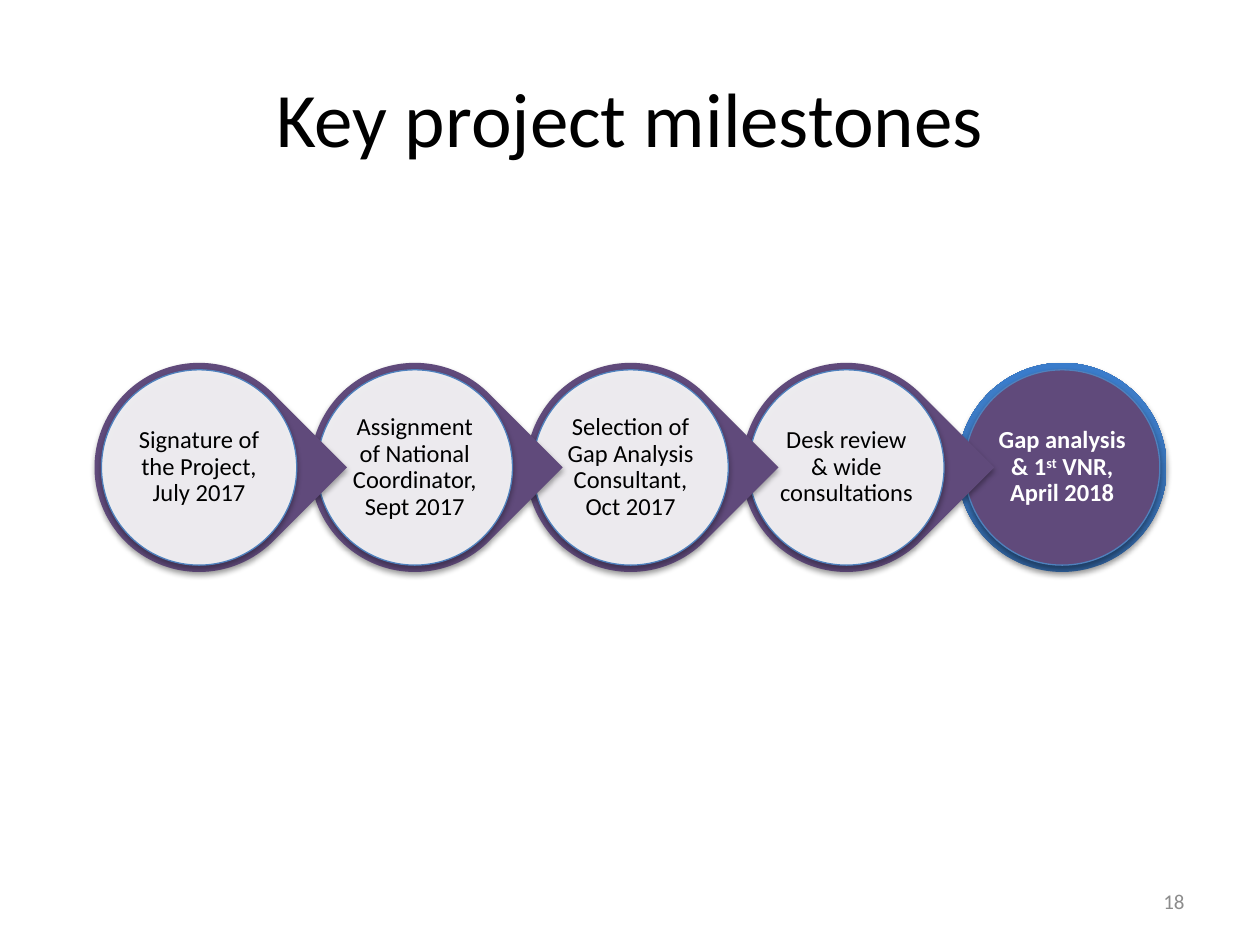
import pptx
import pptx.dml.color
import pptx.enum.shapes
import pptx.enum.text
import pptx.oxml
import pptx.oxml.ns
import pptx.util
from lxml import etree

RGBColor = pptx.dml.color.RGBColor
Inches = pptx.util.Inches
Pt = pptx.util.Pt
SHAPE = pptx.enum.shapes.MSO_SHAPE
ALIGN = pptx.enum.text.PP_ALIGN
MIDDLE = pptx.enum.text.MSO_ANCHOR.MIDDLE

BLACK = RGBColor(0x00, 0x00, 0x00)
WHITE = RGBColor(0xFF, 0xFF, 0xFF)
GREY = RGBColor(0x8C, 0x8C, 0x8C)
PURPLE = RGBColor(0x60, 0x4A, 0x7B)
BLUE = RGBColor(0x4F, 0x81, 0xBD)
RING_STOPS = [
    (0, RGBColor(0x2F, 0x5F, 0x99)),
    (80, RGBColor(0x3D, 0x7C, 0xC7)),
    (100, RGBColor(0x3A, 0x7C, 0xCB)),
]

SLIDE_W, SLIDE_H = 10, 7.5
RING = 1.66         # outer diameter of a milestone
DISC = 1.55         # inner disc
LABEL = 1.11        # square inside the disc

# Each milestone is a list of (text, is superscript) pieces
MILESTONES = [
    [("Signature of the Project, July 2017", False)],
    [("Assignment of National Coordinator, Sept 2017", False)],
    [("Selection of Gap Analysis Consultant, Oct 2017", False)],
    [("Desk review & wide consultations", False)],
    [("Gap analysis & 1", False), ("st", True), (" VNR, April 2018", False)],
]


def set_values(target, values):
    for name, value in values.items():
        setattr(target, name, value)


def format_font(font, size, color, bold=False):
    set_values(font, {"name": "Calibri", "size": Pt(size), "bold": bold})
    font.color.rgb = color


def centred_box(center_x, center_y, size):
    return [Inches(v) for v in (center_x - size / 2, center_y - size / 2, size, size)]


def add_drop_shadow(shape):
    shape.shadow.inherit = False
    effects = shape._element.spPr.find(pptx.oxml.ns.qn("a:effectLst"))
    effects.append(pptx.oxml.parse_xml(
        f'<a:outerShdw {pptx.oxml.ns.nsdecls("a")} blurRad="{Pt(3.1)}" dist="{Pt(1.8)}" '
        'dir="5400000" rotWithShape="0"><a:srgbClr val="000000">'
        '<a:alpha val="35000"/></a:srgbClr></a:outerShdw>'))


def fill_gradient(shape, stops):
    """Shade from bottom to top through any number of stops."""
    shape.fill.gradient()
    gradient = shape._element.spPr.find(pptx.oxml.ns.qn("a:gradFill"))
    stop_list = gradient.find(pptx.oxml.ns.qn("a:gsLst"))
    for stop in list(stop_list):
        stop_list.remove(stop)
    for percent, color in stops:
        stop_list.append(pptx.oxml.parse_xml(
            f'<a:gs {pptx.oxml.ns.nsdecls("a")} pos="{percent * 1000}">'
            f'<a:srgbClr val="{color}"/></a:gs>'))
    gradient.find(pptx.oxml.ns.qn("a:lin")).set("ang", "16200000")


def add_title(slide, left, top, width, height):
    title = slide.shapes.title
    set_values(title, {"left": Inches(left), "top": Inches(top),
                       "width": Inches(width), "height": Inches(height)})
    title.text_frame.text = "Key project milestones"
    title.text_frame.vertical_anchor = MIDDLE
    heading = title.text_frame.paragraphs[0]
    heading.alignment = ALIGN.CENTER
    format_font(heading.runs[0].font, 44, BLACK)


def add_page_number(slide, left, top, width, height):
    number = slide.shapes.add_textbox(*map(Inches, (left, top, width, height)))
    set_values(number.text_frame, {"word_wrap": True, "vertical_anchor": MIDDLE,
                                   "text": "18"})
    paragraph = number.text_frame.paragraphs[0]
    paragraph.alignment = ALIGN.RIGHT
    format_font(paragraph.runs[0].font, 12, GREY)


def add_milestone(shapes, pieces, center_x, center_y, is_last):
    # Outer ring, pointing at the next milestone unless it is the last
    outline = SHAPE.OVAL if is_last else SHAPE.TEAR
    ring = shapes.add_shape(outline, *centred_box(center_x, center_y, RING))
    if is_last:
        fill_gradient(ring, RING_STOPS)
    else:
        ring.rotation = 45
        ring.adjustments[0] = 1
        ring.fill.solid()
        ring.fill.fore_color.rgb = PURPLE
    ring.line.fill.background()
    add_drop_shadow(ring)

    # Inner disc
    disc = shapes.add_shape(SHAPE.OVAL, *centred_box(center_x, center_y, DISC))
    disc.fill.solid()
    disc.fill.fore_color.rgb = PURPLE if is_last else WHITE
    if not is_last:
        color = disc._element.spPr.find(
            f'{pptx.oxml.ns.qn("a:solidFill")}/{pptx.oxml.ns.qn("a:srgbClr")}')
        etree.SubElement(color, pptx.oxml.ns.qn("a:alpha"), val="90000")
    disc.line.color.rgb = BLUE
    disc.line.width = Pt(0.75)
    add_drop_shadow(disc)

    # Label
    label = shapes.add_textbox(*centred_box(center_x, center_y, LABEL)).text_frame
    set_values(label, {"word_wrap": True, "vertical_anchor": MIDDLE})
    set_values(label, {f"margin_{side}": Inches(0.02)
                       for side in ("left", "top", "right", "bottom")})
    paragraph = label.paragraphs[0]
    set_values(paragraph, {"alignment": ALIGN.CENTER, "line_spacing": 0.9,
                           "space_after": Pt(4.9)})
    for text, is_superscript in pieces:
        run = paragraph.add_run()
        run.text = text
        format_font(run.font, 14, WHITE if is_last else BLACK, is_last)
        if is_superscript:
            run._r.get_or_add_rPr().set("baseline", "30000")


def add_milestone_chain(slide, left, top, width, height):
    """Spread the milestones evenly; earlier ones overlap later ones."""
    chain = slide.shapes.add_group_shape()
    last = len(MILESTONES) - 1
    pitch = (width - RING) / last
    for index in range(last, -1, -1):
        add_milestone(chain.shapes, MILESTONES[index],
                      left + RING / 2 + index * pitch, top + height / 2, index == last)


def main():
    deck = pptx.Presentation()
    set_values(deck, {"slide_width": Inches(SLIDE_W), "slide_height": Inches(SLIDE_H)})
    slide = deck.slides.add_slide(deck.slide_layouts[5])
    margin = 0.05 * SLIDE_W
    add_title(slide, margin, 0.04 * SLIDE_H, SLIDE_W - 2 * margin, 1.25)
    add_page_number(slide, SLIDE_W - margin - 2.33, 6.95, 2.33, 0.4)
    add_milestone_chain(slide, 0.75, 2.88, 8.51, RING)
    deck.save("out.pptx")


if __name__ == "__main__":
    main()
